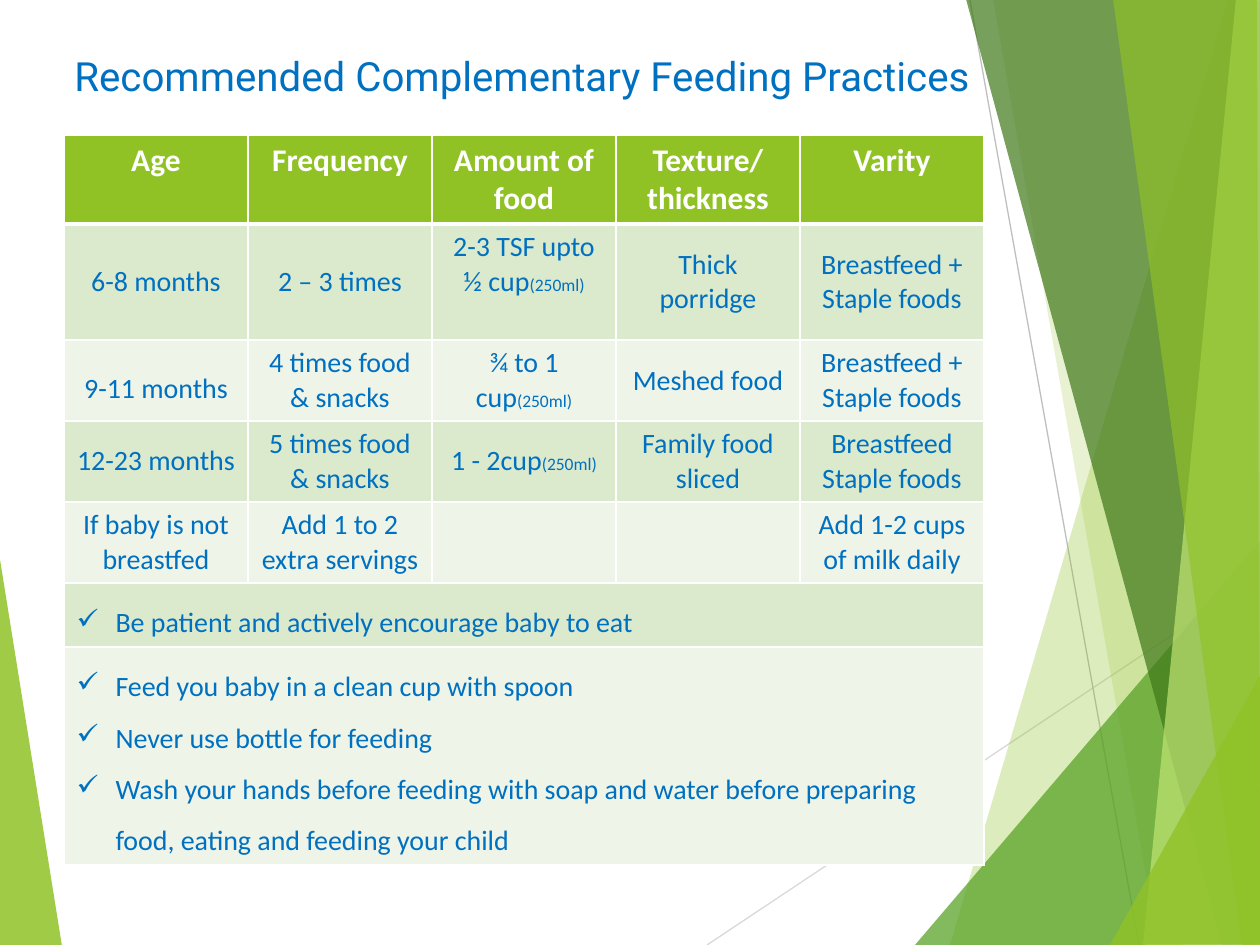
from lxml import etree
from pptx import Presentation
from pptx.dml.color import RGBColor
from pptx.enum.shapes import MSO_CONNECTOR
from pptx.enum.text import MSO_ANCHOR, PP_ALIGN
from pptx.oxml.ns import qn
from pptx.util import Emu, Pt

STRAIGHT = MSO_CONNECTOR.STRAIGHT
TOP, MIDDLE = MSO_ANCHOR.TOP, MSO_ANCHOR.MIDDLE
LEFT, CENTER = PP_ALIGN.LEFT, PP_ALIGN.CENTER

LIME = RGBColor(0x90, 0xC2, 0x26)
GREEN = RGBColor(0x54, 0xA0, 0x21)
FOREST = RGBColor(0x3F, 0x78, 0x19)
PALE_LIME = RGBColor(0xC0, 0xE4, 0x74)
BLUE = RGBColor(0x00, 0x70, 0xC0)
WHITE = RGBColor(0xFF, 0xFF, 0xFF)
BANDS = (RGBColor(0xDB, 0xE9, 0xCD), RGBColor(0xEE, 0xF4, 0xE8))
LIGHT_GRAY = RGBColor(0xD9, 0xD9, 0xD9)
GRAY = RGBColor(0xBF, 0xBF, 0xBF)

TITLE = "Recommended Complementary Feeding Practices"
HEADERS = ["Age", "Frequency", "Amount of food", "Texture/ thickness", "Varity"]
CUP = "(250ml)"
FEEDING = [
    ["6-8 months", "2 – 3 times", "2-3 TSF upto ½ cup" + CUP,
     "Thick porridge", "Breastfeed +\nStaple foods"],
    ["9-11 months", "4 times food & snacks", "¾ to 1 cup" + CUP,
     "Meshed food", "Breastfeed +\nStaple foods"],
    ["12-23 months", "5 times food & snacks", "1 - 2cup" + CUP,
     "Family food sliced", "Breastfeed\nStaple foods"],
    ["If baby is not breastfed", "Add 1 to 2 extra servings", "", "",
     "Add 1-2 cups of milk daily"],
]
ADVICE = [
    ["Be patient and actively encourage baby to eat"],
    ["Feed you baby in a clean cup with spoon",
     "Never use bottle for feeding",
     "Wash your hands before feeding with soap and water before preparing "
     "food, eating and feeding your child"],
]
ROW_HEIGHTS = [89, 116, 81, 81, 81, 64, 218]
TABLE_LEFT, TABLE_TOP, COLUMN_WIDTH = 64, 135, 184
BULLET_INDENT = 39

LEFT_FACET = (LIME, 85, [(-1, 553), (62, 946), (-1, 945)])
RAYS = [
    ((707, 945), (1261, 576), LIGHT_GRAY),
    ((970, 0), (1139, 945), GRAY),
]
RIGHT_FACETS = [
    (LIME, 30, [(1228, 0), (950, 945), (1262, 946), (1261, 1)]),
    (LIME, 20, [(993, -1), (1158, 945), (1261, 945), (1261, -1)]),
    (GREEN, 72, [(915, 945), (1260, 541), (1261, 945)]),
    (FOREST, 70, [(966, -1), (1222, 945), (1261, 944), (1261, -1)]),
    (PALE_LIME, 70, [(1236, -1), (1143, 945), (1261, 945), (1260, -1)]),
    (LIME, 65, [(1113, -1), (1242, 945), (1260, 945), (1257, -1)]),
    (LIME, 80, [(1110, 945), (1261, 674), (1261, 944)]),
]


def px(length):
    return Emu(round(length * 914400 / 126))


def add_facet(page, color, opacity, points):
    corners = [(px(x), px(y)) for x, y in points]
    builder = page.shapes.build_freeform(*corners[0])
    builder.add_line_segments(corners[1:], close=True)
    facet = builder.convert_to_shape()
    facet.shadow.inherit = False
    facet.line.fill.background()
    facet.fill.solid()
    facet.fill.fore_color.rgb = color
    tint = facet._element.spPr.find(qn("a:solidFill"))[0]
    etree.SubElement(tint, qn("a:alpha"), val=str(opacity * 1000))


def add_ray(page, start, end, color):
    ray = page.shapes.add_connector(STRAIGHT, *map(px, start + end))
    ray.line.color.rgb = color
    ray.line.width = Pt(0.75)
    etree.SubElement(ray._element.spPr, qn("a:effectLst"))


def format_span(span, size, color, font="Calibri", bold=False):
    span.font.name = font
    span.font.size = Pt(size)
    span.font.bold = bold
    span.font.color.rgb = color


def style_cell(cell, fill, top, bottom):
    properties = cell._tc.get_or_add_tcPr()
    for side, width in (("L", 1), ("R", 1), ("T", top), ("B", bottom)):
        border = etree.SubElement(properties, qn("a:ln" + side), w=str(Pt(width)))
        paint = etree.SubElement(border, qn("a:solidFill"))
        etree.SubElement(paint, qn("a:srgbClr"), val=str(WHITE))
    cell.fill.solid()
    cell.fill.fore_color.rgb = fill


def write_cell(cell, text, size, color, bold=False, align=CENTER):
    cell.text_frame.text = text.replace(CUP, "")
    for para in cell.text_frame.paragraphs:
        para.alignment = align
        for span in para.runs:
            format_span(span, size, color, bold=bold)
    if text.endswith(CUP):
        span = cell.text_frame.paragraphs[-1].add_run()
        span.text = CUP
        format_span(span, 10, color)


def add_bullet(para):
    para.line_spacing = 1.5
    properties = para._p.get_or_add_pPr()
    properties.set("marL", str(px(BULLET_INDENT)))
    properties.set("indent", str(-px(BULLET_INDENT)))
    etree.SubElement(properties, qn("a:buChar"), char="✓")


def add_title(page):
    box = page.shapes.add_textbox(px(62), px(45), px(922), px(80))
    box.text_frame.word_wrap = True
    box.text_frame.text = TITLE
    format_span(box.text_frame.paragraphs[0].runs[0], 23, BLUE, "Roboto")


def add_feeding_table(page):
    columns = len(HEADERS)
    frame = page.shapes.add_table(
        len(ROW_HEIGHTS), columns, px(TABLE_LEFT), px(TABLE_TOP),
        px(COLUMN_WIDTH * columns), px(sum(ROW_HEIGHTS)))
    table = frame.table
    for column in table.columns:
        column.width = px(COLUMN_WIDTH)
    for index, height in enumerate(ROW_HEIGHTS):
        table.rows[index].height = px(height)
        fill = BANDS[(index - 1) % 2] if index else LIME
        for cell in table.rows[index].cells:
            style_cell(cell, fill, 3 if index == 1 else 1, 1 if index else 3)
            cell.vertical_anchor = MIDDLE if index else TOP

    for column, text in enumerate(HEADERS):
        write_cell(table.cell(0, column), text, 18, WHITE, bold=True)
    for row, texts in enumerate(FEEDING, 1):
        for column, text in enumerate(texts):
            write_cell(table.cell(row, column), text, 16, BLUE)
    table.cell(1, 2).vertical_anchor = TOP
    table.cell(2, 0).text_frame.paragraphs[0].line_spacing = 1.5

    for row, points in enumerate(ADVICE, 1 + len(FEEDING)):
        cell = table.cell(row, 0)
        cell.merge(table.cell(row, columns - 1))
        write_cell(cell, "\n".join(points), 16, BLUE, align=LEFT)
        for para in cell.text_frame.paragraphs:
            add_bullet(para)


def main():
    deck = Presentation()
    deck.slide_width, deck.slide_height = px(1260), px(945)
    page = deck.slides.add_slide(deck.slide_layouts[6])
    add_facet(page, *LEFT_FACET)
    for ray in RAYS:
        add_ray(page, *ray)
    for facet in RIGHT_FACETS:
        add_facet(page, *facet)
    add_title(page)
    add_feeding_table(page)
    deck.save("out.pptx")


if __name__ == "__main__":
    main()
